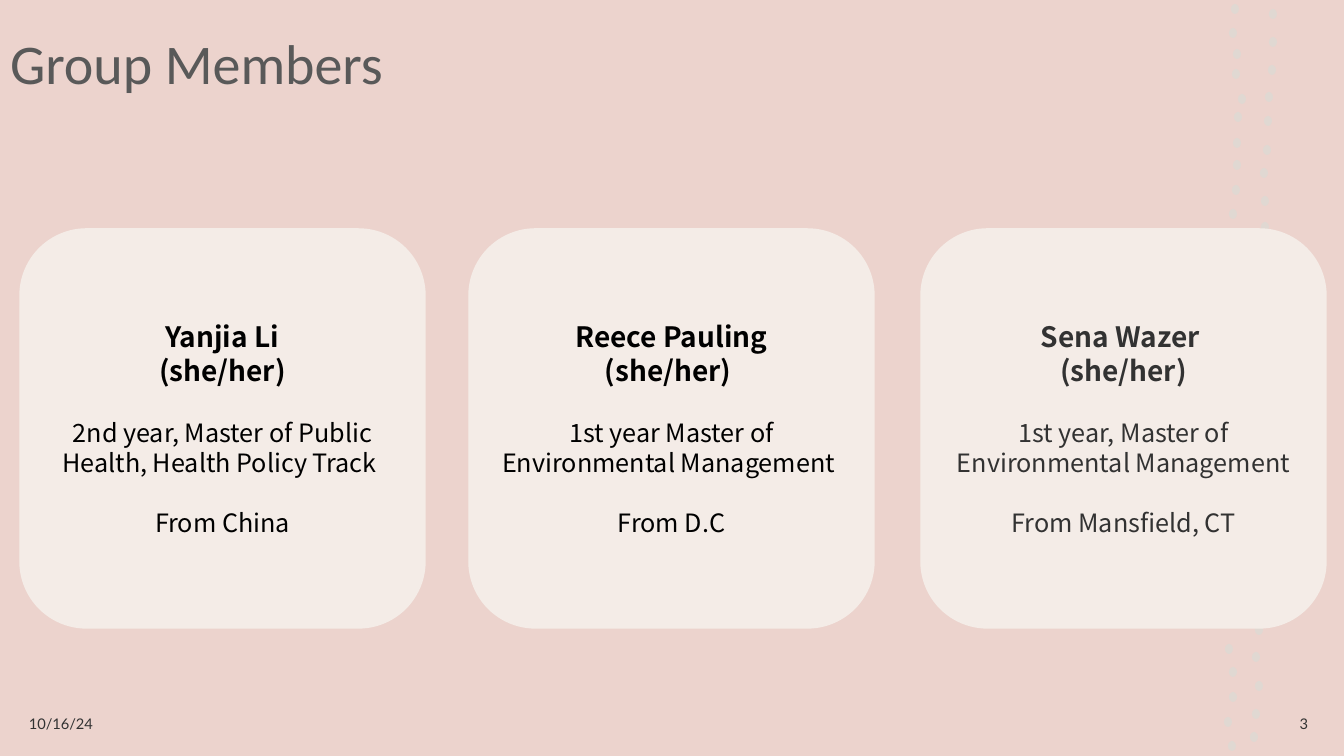
from dataclasses import dataclass

from pptx import Presentation
from pptx.dml.color import RGBColor
from pptx.enum.shapes import MSO_SHAPE as Preset
from pptx.enum.text import MSO_ANCHOR as Anchor, MSO_AUTO_SIZE as AutoSize, PP_ALIGN as Align
from pptx.shapes.autoshape import Shape
from pptx.slide import Slide
from pptx.util import Emu, Pt

EMU_PER_PX = 914400 / 100.8


def px(length: int) -> Emu:
    return Emu(round(length * EMU_PER_PX))


@dataclass(frozen=True)
class TextStyle:
    font: str
    size: float
    bold: bool = False
    line_height: float | None = None


@dataclass(frozen=True)
class Theme:
    background: str = "ECD3CD"
    dot: str = "E0D8D2"
    card: str = "F4ECE7"
    heading: str = "595959"
    black: str = "000000"
    charcoal: str = "323232"
    title: TextStyle = TextStyle("Calibri", 40)
    name: TextStyle = TextStyle("Noto Sans CJK SC", 20, True, 24.3)
    detail: TextStyle = TextStyle("Noto Sans CJK SC", 18, False, 21.4)
    footer: TextStyle = TextStyle("Lato", 10.5)


@dataclass(frozen=True)
class Box:
    left: int
    top: int
    width: int
    height: int


@dataclass(frozen=True)
class Member:
    left: int
    name: str
    pronouns: str
    study: str
    home: str
    color: str


@dataclass(frozen=True)
class Footer:
    box: Box
    text: str
    align: Align


THEME = Theme()
TITLE_BOX = Box(0, 0, 1159, 101)
CARD_TOP, CARD_WIDTH, CARD_HEIGHT = 229, 405, 399
DOT_WIDTH, DOT_HEIGHT = 8, 10

MEMBERS = [
    Member(20, "Yanjia Li", "(she/her)",
           "2nd year, Master of Public Health, Health Policy Track\N{NO-BREAK SPACE}",
           "From China", THEME.black),
    Member(469, "Reece Pauling", "(she/her)\N{NO-BREAK SPACE}",
           "1st year Master of Environmental Management ", "From D.C", THEME.black),
    Member(921, "Sena Wazer ", "(she/her)",
           "1st year, Master of Environmental Management",
           "From Mansfield, CT", THEME.charcoal),
]

FOOTERS = [
    Footer(Box(19, 704, 313, 40), "10/16/24", Align.LEFT),
    Footer(Box(1263, 704, 55, 40), "3", Align.RIGHT),
]

# Centres of the hand-scattered dots, by column
DOT_CENTRES = [
    # Upper left column
    (1235, 9), (1233, 33), (1237, 54), (1236, 74), (1242, 99), (1238, 117),
    (1237, 143), (1237, 165), (1236, 190), (1233, 214),
    # Upper right column
    (1273, 14), (1273, 42), (1272, 70), (1269, 97), (1268, 121), (1267, 150),
    (1264, 173), (1265, 201), (1265, 227),
    # Lower left column
    (1231, 622), (1229, 649), (1233, 672), (1233, 697), (1228, 722), (1232, 746),
    # Lower right column
    (1259, 630), (1256, 657), (1259, 686), (1256, 714), (1254, 737),
]


def write(shape: Shape, lines: list[tuple[str, TextStyle, float]], color: str,
          align: Align, anchor: Anchor = Anchor.MIDDLE) -> None:
    """Fill a shape with lines of text, style and space before in points."""
    frame = shape.text_frame
    frame.word_wrap = True
    frame.auto_size = AutoSize.NONE
    frame.vertical_anchor = anchor
    for index, (text, style, space_before) in enumerate(lines):
        paragraph = frame.add_paragraph() if index else frame.paragraphs[0]
        paragraph.text = text
        paragraph.alignment = align
        paragraph.space_before = Pt(space_before)
        if style.line_height:
            paragraph.line_spacing = Pt(style.line_height)
        font = paragraph.font
        font.name = style.font
        font.size = Pt(style.size)
        font.bold = style.bold
        font.color.rgb = RGBColor.from_string(color)


def add_filled(slide: Slide, preset: Preset, box: Box, color: str) -> Shape:
    shape = slide.shapes.add_shape(
        preset, px(box.left), px(box.top), px(box.width), px(box.height))
    shape.shadow.inherit = False
    shape.fill.solid()
    shape.fill.fore_color.rgb = RGBColor.from_string(color)
    shape.line.fill.background()
    return shape


def add_dot(slide: Slide, centre: tuple[int, int]) -> None:
    x, y = centre
    box = Box(x - DOT_WIDTH // 2, y - DOT_HEIGHT // 2, DOT_WIDTH, DOT_HEIGHT)
    add_filled(slide, Preset.OVAL, box, THEME.dot)


def add_card(slide: Slide, member: Member) -> None:
    box = Box(member.left, CARD_TOP, CARD_WIDTH, CARD_HEIGHT)
    card = add_filled(slide, Preset.ROUNDED_RECTANGLE, box, THEME.card)
    card.line.color.rgb = RGBColor.from_string(THEME.card)
    card.line.width = Pt(1)
    gap = THEME.detail.line_height
    write(card, [(member.name, THEME.name, 0), (member.pronouns, THEME.name, 0),
                 (member.study, THEME.detail, gap), (member.home, THEME.detail, gap)],
          member.color, Align.CENTER)


def add_footer(slide: Slide, footer: Footer) -> None:
    box = footer.box
    shape = slide.shapes.add_textbox(
        px(box.left), px(box.top), px(box.width), px(box.height))
    write(shape, [(footer.text, THEME.footer, 0)], THEME.charcoal, footer.align)


def set_title(slide: Slide, text: str, box: Box) -> None:
    title = slide.shapes.title
    title.left, title.top = px(box.left), px(box.top)
    title.width, title.height = px(box.width), px(box.height)
    write(title, [(text, THEME.title, 0)], THEME.heading, Align.LEFT, Anchor.BOTTOM)


def main() -> None:
    presentation = Presentation()
    presentation.slide_width, presentation.slide_height = px(1344), px(756)
    slide = presentation.slides.add_slide(presentation.slide_layouts[5])

    # Background and dotted trail
    slide.background.fill.solid()
    slide.background.fill.fore_color.rgb = RGBColor.from_string(THEME.background)
    for centre in DOT_CENTRES:
        add_dot(slide, centre)

    # Title, member cards, date and slide number
    set_title(slide, "Group Members", TITLE_BOX)
    for member in MEMBERS:
        add_card(slide, member)
    for footer in FOOTERS:
        add_footer(slide, footer)

    presentation.save("out.pptx")


if __name__ == "__main__":
    main()
